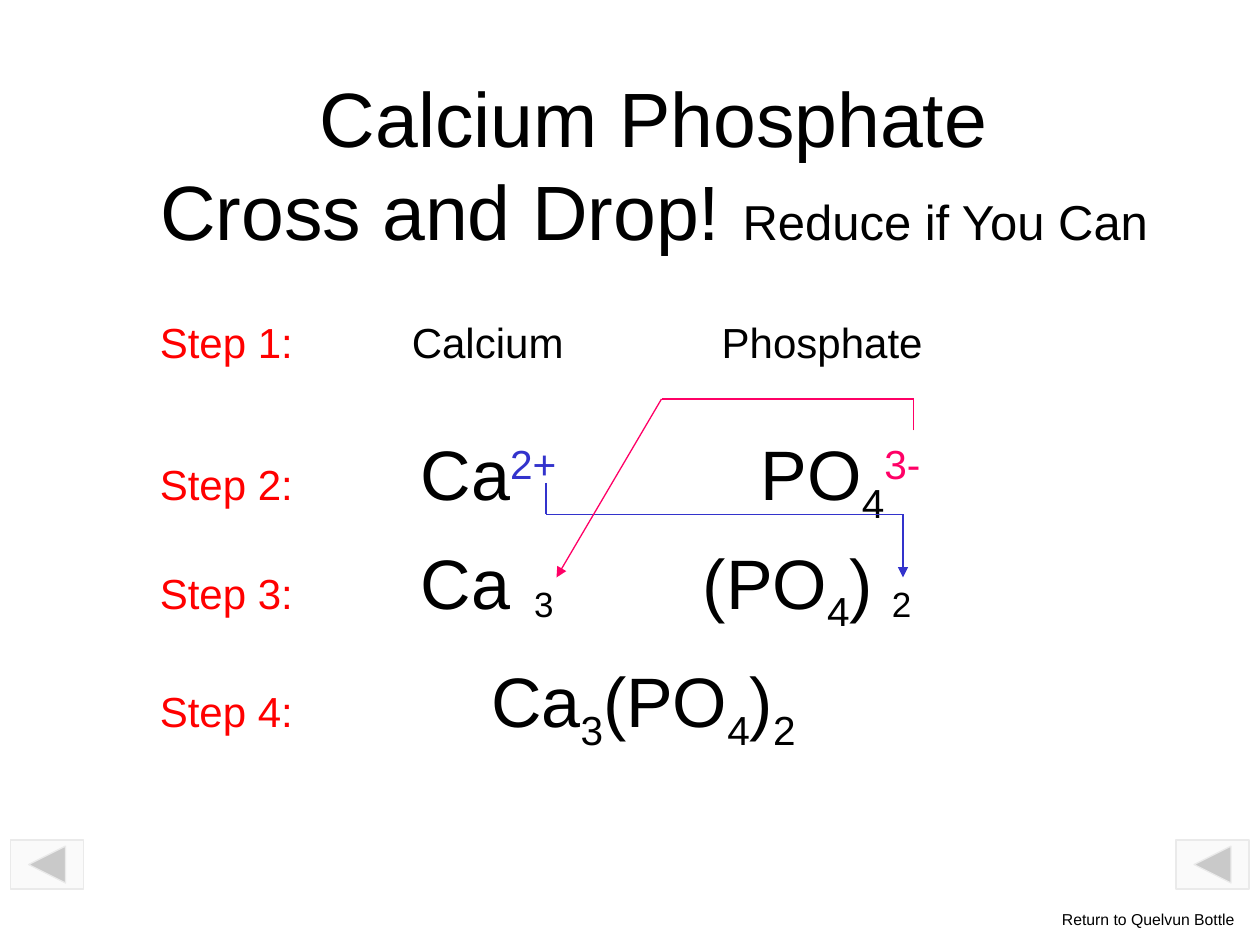
from dataclasses import dataclass
from itertools import pairwise

from lxml.etree import SubElement
from pptx import Presentation
from pptx.dml.color import RGBColor
from pptx.enum.shapes import MSO_CONNECTOR, MSO_SHAPE
from pptx.enum.text import MSO_ANCHOR, MSO_AUTO_SIZE, PP_ALIGN
from pptx.oxml.ns import qn
from pptx.util import Inches, Pt

BLACK, RED, BLUE, PINK = "000000", "FF0000", "3333CC", "FF0066"
SUPERSCRIPT, SUBSCRIPT = 30000, -25000
GRID_PER_INCH = 12


@dataclass(frozen=True)
class Span:
    text: str
    size: float = 40
    color: str = BLACK
    baseline: int = 0


@dataclass(frozen=True)
class Label:
    left: float
    top: float
    width: float
    height: float
    spans: tuple[Span, ...]
    tabs: tuple[float, ...] = ()


@dataclass(frozen=True)
class Arrow:
    points: tuple[tuple[int, int], ...]
    color: str


def rgb(color: str) -> RGBColor:
    """Turn a hex string into a colour."""
    return RGBColor.from_string(color)


def grid(steps: int) -> Inches:
    """Turn grid steps into a length."""
    return Inches(steps / GRID_PER_INCH)


def step(number: int, top: float, width: float, height: float,
         tabs: tuple[float, ...], *spans: Span) -> Label:
    """Describe one numbered row, with tab stops measured from its text."""
    heading = Span(f"Step {number}:\t", 24, RED)
    return Label(1.17, top, width, height, (heading, *spans), tabs)


def sub(text: str) -> Span:
    """Describe a subscript."""
    return Span(text, baseline=SUBSCRIPT)


def add_spans(para, spans: tuple[Span, ...]) -> None:
    """Append formatted runs to a paragraph."""
    for span in spans:
        run = para.add_run()
        run.text = span.text
        run.font.name = "Arial"
        run.font.size = Pt(span.size)
        run.font.color.rgb = rgb(span.color)
        if span.baseline:
            run.font._element.set("baseline", str(span.baseline))


def add_label(page, label: Label) -> None:
    """Draw an unwrapped line of text."""
    box = page.shapes.add_textbox(Inches(label.left), Inches(label.top),
                                  Inches(label.width), Inches(label.height))
    frame = box.text_frame
    frame.word_wrap = False
    frame.auto_size = MSO_AUTO_SIZE.SHAPE_TO_FIT_TEXT
    para = frame.paragraphs[0]
    add_spans(para, label.spans)
    if label.tabs:
        stops = SubElement(para._p.get_or_add_pPr(), qn("a:tabLst"))
        for position in label.tabs:
            SubElement(stops, qn("a:tab"), pos=str(Inches(position)), algn="l")


def add_title(page) -> None:
    """Draw the two centred title lines."""
    box = page.shapes.add_textbox(Inches(0.75), Inches(0.67), Inches(8.88), Inches(1.25))
    frame = box.text_frame
    frame.word_wrap = True
    frame.vertical_anchor = MSO_ANCHOR.MIDDLE
    add_spans(frame.paragraphs[0], (Span("Calcium Phosphate", 44),))
    add_spans(frame.add_paragraph(),
              (Span("Cross and Drop! ", 44), Span("Reduce if You Can", 28)))
    for para in frame.paragraphs:
        para.alignment = PP_ALIGN.CENTER


def add_arrow(page, arrow: Arrow) -> None:
    """Draw a bent line that ends in an arrowhead."""
    for start, end in pairwise(arrow.points):
        line = page.shapes.add_connector(
            MSO_CONNECTOR.STRAIGHT, *(grid(steps) for steps in start + end))
        line.line.color.rgb = rgb(arrow.color)
        line.line.width = Pt(0.75)
        if end == arrow.points[-1]:
            SubElement(line.line._get_or_add_ln(), qn("a:tailEnd"), type="triangle")
        SubElement(line._element.spPr, qn("a:effectLst"))


def add_back_button(page, left: int) -> None:
    """Draw a half-transparent back button."""
    button = page.shapes.add_shape(MSO_SHAPE.ACTION_BUTTON_BACK_OR_PREVIOUS,
                                   grid(left), grid(80), Inches(0.58), Inches(0.39))
    button.shadow.inherit = False
    button.fill.solid()
    button.fill.fore_color.rgb = rgb("F7F7F7")
    fill_color = button._element.spPr.find(qn("a:solidFill"))[0]
    SubElement(fill_color, qn("a:alpha"), val="50000")
    button.line.color.rgb = rgb("EAEAEA")
    button.line.width = Pt(0.75)


LABELS = (
    step(1, 2.46, 6.26, 0.5, (2, 4.46), Span("Calcium\tPhosphate", 24)),
    step(2, 3.37, 6.32, 0.77, (2.07, 4.77),
         Span("Ca"), Span("2+", color=BLUE, baseline=SUPERSCRIPT), Span("\tPO"),
         sub("4"), Span("3-", color=PINK, baseline=SUPERSCRIPT)),
    step(3, 4.23, 5.89, 0.77, (2.07, 4.31), Span("Ca\t(PO"), sub("4"), Span(")")),
    step(4, 5.17, 5.33, 0.77, (2.63,),
         Span("Ca"), sub("3"), Span("(PO"), sub("4"), Span(")"), sub("2")),
    Label(4.14, 4.57, 0.36, 0.43, (Span("3", 20),)),
    Label(6.98, 4.57, 0.36, 0.43, (Span("2", 20),)),
    Label(8.33, 7.17, 1.58, 0.25, (Span("Return to Quelvun Bottle", 9),)),
)
ARROWS = (
    Arrow(((52, 46), (52, 49), (86, 49), (86, 55)), BLUE),
    Arrow(((87, 41), (87, 38), (63, 38), (53, 55)), PINK),
)


def main() -> None:
    """Build and save the slide."""
    deck = Presentation()
    deck.slide_width, deck.slide_height = Inches(10), Inches(7.5)
    page = deck.slides.add_slide(deck.slide_layouts[6])
    add_title(page)
    for label in LABELS:
        add_label(page, label)
    for arrow in ARROWS:
        add_arrow(page, arrow)
    for left in (112, 1):
        add_back_button(page, left)
    deck.save("out.pptx")


if __name__ == "__main__":
    main()
